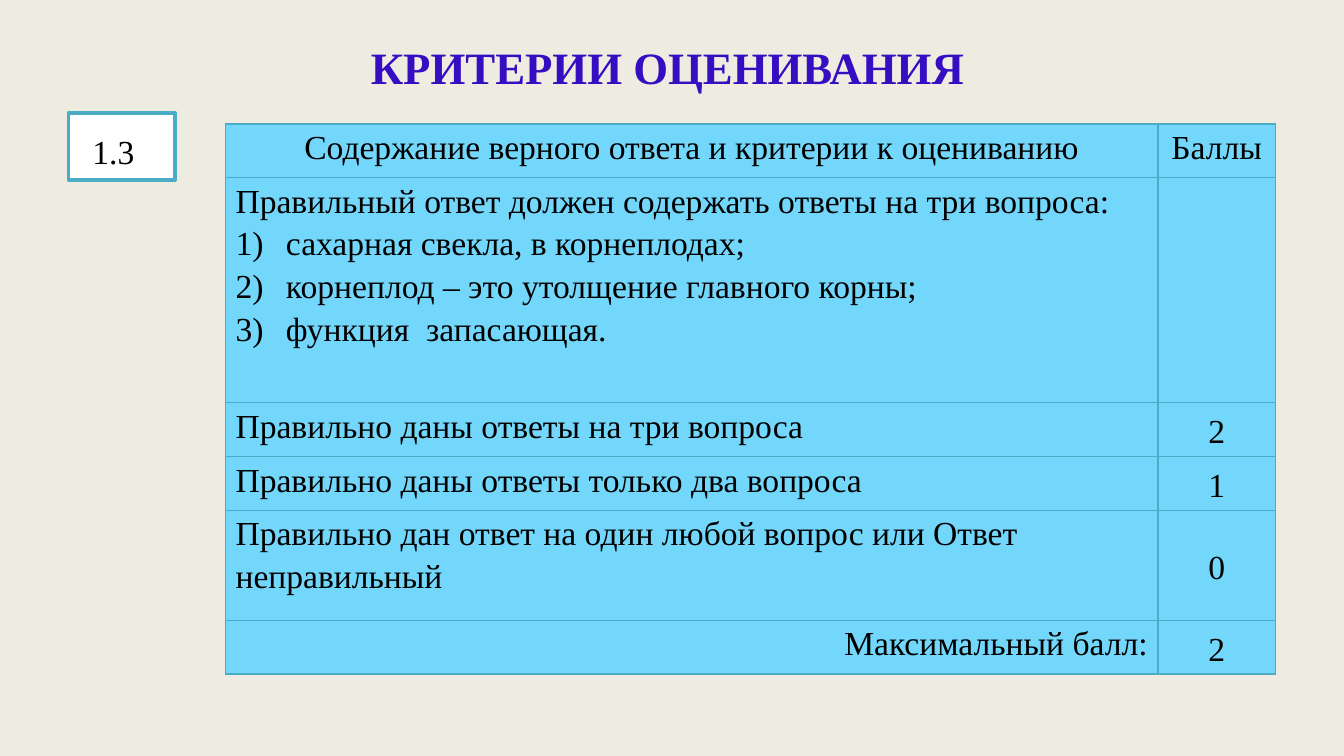
from dataclasses import dataclass

from lxml.etree import SubElement
from pptx import Presentation
from pptx.dml.color import RGBColor
from pptx.enum.shapes import MSO_SHAPE
from pptx.enum.text import MSO_ANCHOR, PP_ALIGN
from pptx.oxml import parse_xml
from pptx.oxml.ns import nsdecls, qn
from pptx.util import Pt

BACKGROUND = RGBColor(0xEE, 0xEC, 0xE1)
TITLE_COLOR = RGBColor(0x35, 0x0E, 0xC2)
TEAL = RGBColor(0x4B, 0xAC, 0xC6)
CELL_BLUE = RGBColor(0x73, 0xD6, 0xFB)
WHITE = RGBColor(0xFF, 0xFF, 0xFF)
BLACK = RGBColor(0, 0, 0)
FONT = "Times New Roman"
BORDER_WIDTH = Pt(0.79)
LIST_INDENT = Pt(27)


@dataclass
class Criterion:
    text: str
    score: str
    height: float
    align: PP_ALIGN = PP_ALIGN.JUSTIFY
    score_anchor: MSO_ANCHOR = MSO_ANCHOR.MIDDLE
    items: tuple[str, ...] = ()


CRITERIA = [
    Criterion("Содержание верного ответа и критерии к оцениванию", "Баллы", 28.8,
              PP_ALIGN.CENTER, MSO_ANCHOR.TOP),
    Criterion("Правильный ответ должен содержать ответы на три вопроса:", "", 120.6,
              items=("сахарная свекла, в корнеплодах;",
                     "корнеплод – это утолщение главного корны;",
                     "функция  запасающая.")),
    Criterion("Правильно даны ответы на три вопроса", "2", 28.8),
    Criterion("Правильно даны ответы только два вопроса", "1", 28.8),
    Criterion("Правильно дан ответ на один любой вопрос или Ответ неправильный",
              "0", 59, PP_ALIGN.LEFT),
    Criterion("Максимальный балл:", "2", 28.8, PP_ALIGN.RIGHT),
]


def style_font(font, size: float, color: RGBColor, name: str = FONT) -> None:
    font.name = name
    font.size = Pt(size)
    font.color.rgb = color


def add_borders(cell) -> None:
    tc_pr = cell._tc.get_or_add_tcPr()
    for i, side in enumerate(("lnL", "lnR", "lnT", "lnB")):
        tc_pr.insert(i, parse_xml(
            f'<a:{side} {nsdecls("a")} w="{BORDER_WIDTH}"><a:solidFill>'
            f'<a:srgbClr val="{TEAL}"/></a:solidFill></a:{side}>'))


def number_paragraph(p) -> None:
    p_pr = p._p.get_or_add_pPr()
    p_pr.set("marL", str(LIST_INDENT))
    p_pr.set("indent", str(-LIST_INDENT))
    SubElement(p_pr, qn("a:buFont"), typeface="+mj-lt")
    SubElement(p_pr, qn("a:buAutoNum"), type="arabicParenR")


def fill_cell(cell, text: str, align: PP_ALIGN, anchor: MSO_ANCHOR,
              items: tuple[str, ...] = ()) -> None:
    cell.fill.solid()
    cell.fill.fore_color.rgb = CELL_BLUE
    cell.margin_left = cell.margin_right = Pt(5.4)
    cell.margin_top = cell.margin_bottom = 0
    cell.vertical_anchor = anchor
    tf = cell.text_frame
    tf.text = "\n".join((text, *items))
    for i, p in enumerate(tf.paragraphs):
        p.alignment = align
        p.line_spacing = 1.15
        if i:
            number_paragraph(p)
        style_font(p.font, 18, BLACK)
    add_borders(cell)


def add_title(slide, text: str) -> None:
    sp = slide.shapes.add_textbox(Pt(8.6), Pt(10), Pt(698), Pt(51))
    tf = sp.text_frame
    tf.word_wrap = True
    tf.vertical_anchor = MSO_ANCHOR.MIDDLE
    p = tf.paragraphs[0]
    p.text = text
    p.alignment = PP_ALIGN.CENTER
    p.font.bold = True
    style_font(p.font, 24, TITLE_COLOR)


def add_task_number(slide, number: str) -> None:
    sp = slide.shapes.add_shape(MSO_SHAPE.RECTANGLE, Pt(36.7), Pt(60.5), Pt(57), Pt(36))
    sp.shadow.inherit = False
    sp.fill.solid()
    sp.fill.fore_color.rgb = WHITE
    sp.line.color.rgb = TEAL
    sp.line.width = Pt(2)
    tf = sp.text_frame
    tf.vertical_anchor = MSO_ANCHOR.TOP
    p = tf.paragraphs[0]
    p.alignment = PP_ALIGN.LEFT
    for text, size, name in ((" ", 24, "Karla"), (number, 18, FONT)):
        r = p.add_run()
        r.text = text
        style_font(r.font, size, BLACK, name)


def add_criteria_table(slide, criteria: list[Criterion]) -> None:
    widths = (499.5, 63)
    height = sum(c.height for c in criteria)
    table = slide.shapes.add_table(len(criteria), len(widths), Pt(120.8), Pt(66.4),
                                   Pt(sum(widths)), Pt(height)).table
    for column, width in zip(table.columns, widths):
        column.width = Pt(width)
    for i, c in enumerate(criteria):
        table.rows[i].height = Pt(c.height)
        fill_cell(table.cell(i, 0), c.text, c.align, MSO_ANCHOR.TOP, c.items)
        fill_cell(table.cell(i, 1), c.score, PP_ALIGN.CENTER, c.score_anchor)


def main() -> None:
    prs = Presentation()
    prs.slide_width, prs.slide_height = Pt(720), Pt(405)
    slide = prs.slides.add_slide(prs.slide_layouts[6])
    slide.background.fill.solid()
    slide.background.fill.fore_color.rgb = BACKGROUND

    # Heading and task number
    add_title(slide, "КРИТЕРИИ ОЦЕНИВАНИЯ")
    add_task_number(slide, "1.3")

    # Scoring table
    add_criteria_table(slide, CRITERIA)
    prs.save("out.pptx")


if __name__ == "__main__":
    main()
